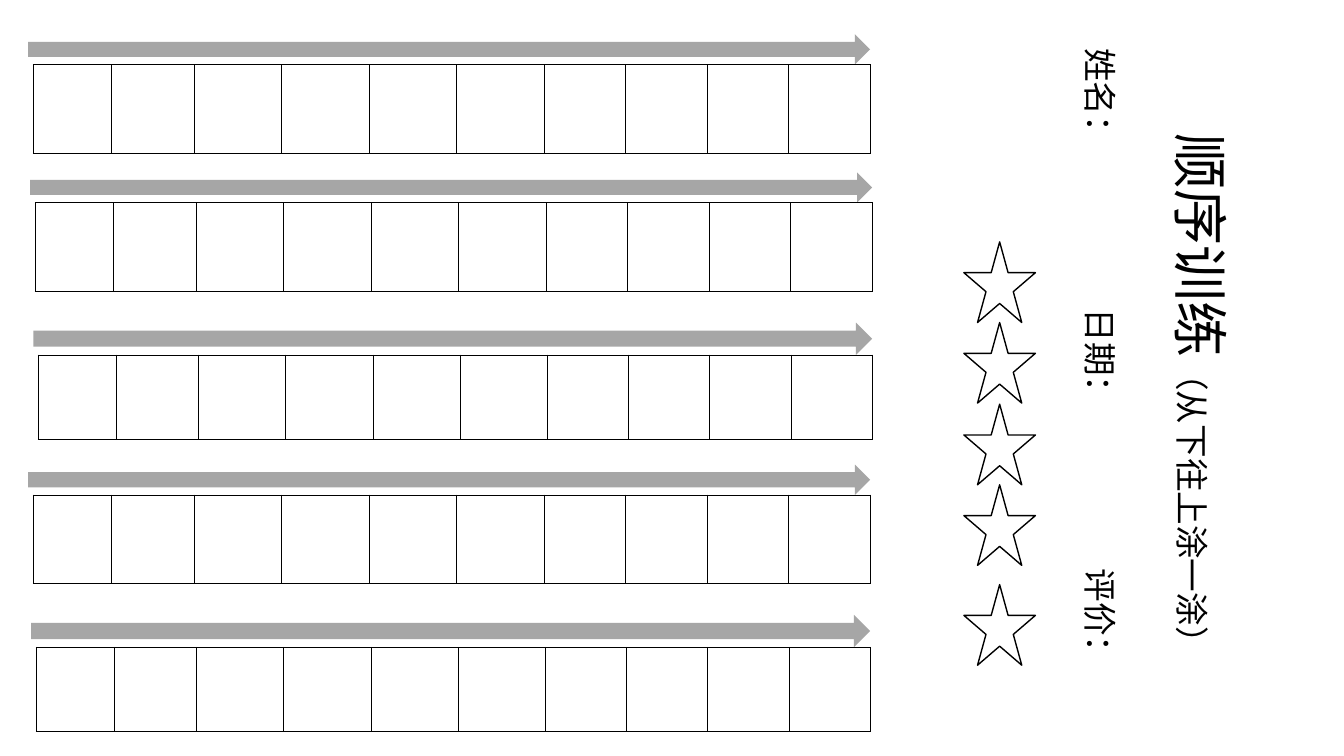
from dataclasses import dataclass

from lxml.etree import SubElement
from pptx import Presentation
from pptx.dml.color import RGBColor
from pptx.enum.shapes import MSO_SHAPE
from pptx.enum.text import MSO_ANCHOR, PP_ALIGN
from pptx.oxml.ns import qn
from pptx.util import Inches, Pt

BLACK = "000000"
GRAY = "A6A6A6"
HAN = "Noto Sans CJK SC"
COLS = [0.78, 0.82] + [0.87] * 4 + [0.81] * 4


@dataclass
class Strip:
    left: float
    top: float
    thick: float
    length: float
    width: float
    height: float


@dataclass
class Label:
    left: float
    top: float
    width: float
    height: float


STRIPS = [
    Strip(0.28, 0.34, 0.30, 8.35, 8.30, 0.88),
    Strip(0.30, 1.71, 0.30, 8.35, 8.30, 0.88),
    Strip(0.33, 3.20, 0.32, 8.32, 8.27, 0.84),
    Strip(0.28, 4.61, 0.30, 8.35, 8.30, 0.88),
    Strip(0.31, 6.10, 0.32, 8.32, 8.27, 0.84),
]
STARS = [2.40, 3.20, 4.01, 4.81, 5.80]
TITLE = Label(9.19, 3.36, 5.83, 1.15)
FIELDS = Label(7.23, 3.45, 7.19, 0.59)


def color(code: str) -> RGBColor:
    return RGBColor.from_string(code)


def add_shape(slide, kind, left: float, top: float, width: float, height: float):
    shape = slide.shapes.add_shape(
        kind, Inches(left), Inches(top), Inches(width), Inches(height))
    shape.shadow.inherit = False
    return shape


def add_edges(cell) -> None:
    props = cell._tc.get_or_add_tcPr()
    for side in ("a:lnL", "a:lnR", "a:lnT", "a:lnB"):
        line = SubElement(props, qn(side), w=str(Pt(0.5)))
        fill = SubElement(line, qn("a:solidFill"))
        SubElement(fill, qn("a:srgbClr"), val=BLACK)


def add_strip(slide, strip: Strip) -> None:
    arrow = add_shape(slide, MSO_SHAPE.RIGHT_ARROW, strip.left, strip.top,
                      strip.length, strip.thick)
    arrow.fill.solid()
    arrow.fill.fore_color.rgb = color(GRAY)
    arrow.line.fill.background()

    # Row of boxes just under the arrow
    table = slide.shapes.add_table(
        1, len(COLS), Inches(strip.left + 0.05), Inches(strip.top + strip.thick),
        Inches(strip.width), Inches(strip.height)).table
    table.first_row = False
    table.horz_banding = False
    scale = strip.width / sum(COLS)
    for col, width in zip(table.columns, COLS):
        col.width = Inches(width * scale)
    for cell in table.iter_cells():
        add_edges(cell)
        cell.fill.background()


def add_star(slide, top: float) -> None:
    star = add_shape(slide, MSO_SHAPE.STAR_5_POINT, 9.56, top, 0.71, 0.80)
    star.fill.background()
    star.line.color.rgb = color(BLACK)
    star.line.width = Pt(1)


def add_label(slide, label: Label):
    box = slide.shapes.add_textbox(Inches(label.left), Inches(label.top),
                                   Inches(label.width), Inches(label.height))
    box.rotation = 90
    box.text_frame.word_wrap = True
    para = box.text_frame.paragraphs[0]
    para.line_spacing = 0.9
    return box.text_frame, para


def style_run(run, size: float, font: str) -> None:
    run.font.size = Pt(size)
    run.font.name = font
    run.font.color.rgb = color(BLACK)
    SubElement(run._r.get_or_add_rPr(), qn("a:ea"), typeface=HAN)


def add_title(slide) -> None:
    frame, para = add_label(slide, TITLE)
    frame.vertical_anchor = MSO_ANCHOR.BOTTOM
    para.alignment = PP_ALIGN.CENTER
    for text, size in (("顺序训练", 40), ("（从下往上涂一涂）", 24)):
        run = para.add_run()
        run.text = text
        style_run(run, size, HAN)


def add_fields(slide) -> None:
    frame, para = add_label(slide, FIELDS)
    frame.margin_left = Inches(0.33)
    para.text = "姓名：\t日期：\t评价："
    para.space_before = Pt(10)
    tabs = SubElement(para._p.get_or_add_pPr(), qn("a:tabLst"))
    for step in (1, 2):
        SubElement(tabs, qn("a:tab"), pos=str(Inches(2.58 * step)), algn="l")
    for run in para.runs:
        style_run(run, 24, "Calibri")


def main() -> None:
    deck = Presentation()
    deck.slide_width = Inches(13.33)
    deck.slide_height = Inches(7.5)
    slide = deck.slides.add_slide(deck.slide_layouts[6])

    # Sideways heading and fields
    add_title(slide)
    add_fields(slide)

    # Strips to fill in
    for strip in STRIPS:
        add_strip(slide, strip)

    # Rating stars
    for top in STARS:
        add_star(slide, top)

    deck.save("out.pptx")


if __name__ == "__main__":
    main()
